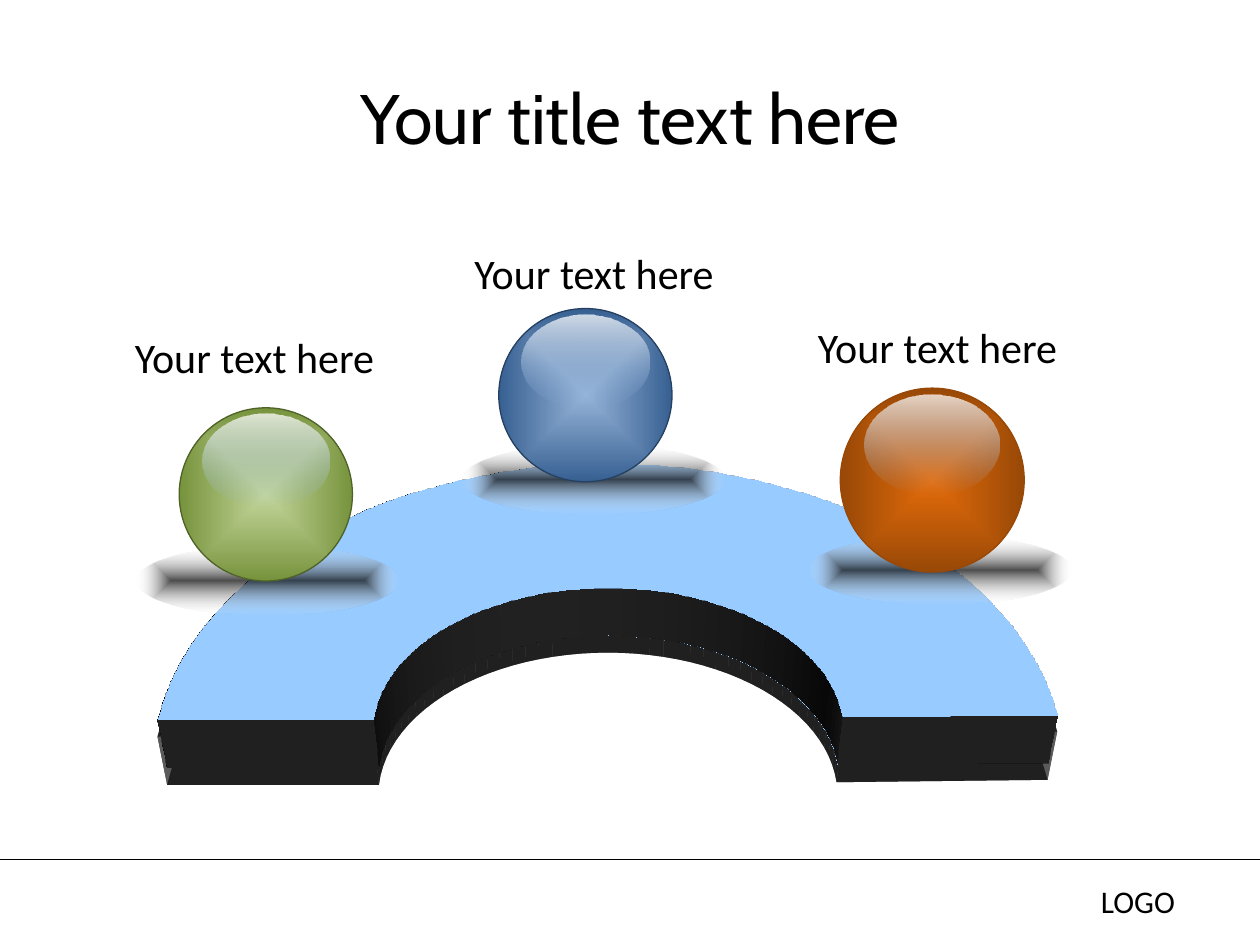
from pptx import Presentation
from pptx.dml.color import RGBColor
from pptx.enum.shapes import MSO_CONNECTOR, MSO_SHAPE
from pptx.enum.text import MSO_ANCHOR, MSO_AUTO_SIZE, PP_ALIGN
from pptx.oxml import parse_xml
from pptx.oxml.ns import nsdecls, qn
from pptx.util import Pt

OVAL, BLOCK_ARC = MSO_SHAPE.OVAL, MSO_SHAPE.BLOCK_ARC
STRAIGHT = MSO_CONNECTOR.STRAIGHT
MIDDLE = MSO_ANCHOR.MIDDLE
FIT_SHAPE = MSO_AUTO_SIZE.SHAPE_TO_FIT_TEXT
LEFT, CENTER = PP_ALIGN.LEFT, PP_ALIGN.CENTER
TITLE_ONLY = 5

COLORS = {
    "text": "000000",
    "arch": "4F81BD",
    "arch_outline": "3A5F8C",
    "arch_side": "404040",
    "arch_shadow": "000000",
    "shadow": "171717",
    "shadow_rim": "FFFFFF",
    "gloss": "FFFFFF",
    "gloss_end": "8EB4E3",
}
CENTER_OUT = ('<a:path path="shape"><a:fillToRect l="50000" t="50000" '
              'r="50000" b="50000"/></a:path>')
DOWNWARD = '<a:lin ang="5400000" scaled="0"/>'

# Gradient stops: position %, colour, opacity %
SHADOW_STOPS = [(0, COLORS["shadow"], 76), (100, COLORS["shadow_rim"], 0)]
GLOSS_STOPS = [(0, COLORS["gloss"], 77), (100, COLORS["gloss_end"], 0)]

# Left, top, diameter, shades from centre to rim, outline
SPHERES = [
    (480.2, 221.8, 105.1, ("E46C0A", "984807", "4C2403"), "984807"),
    (102.4, 233, 99, ("C3D69B", "77933C", "4F6228"), "4F6228"),
    (285, 176.3, 99, ("95B3D7", "376092", "254061"), "254061"),
]
SHADOWS = [(78, 312), (462, 306), (264.2, 254.2)]
LABELS = [(69.1, 185.8, CENTER), (264, 138.2, LEFT), (459.4, 180, CENTER)]


def rgb(color):
    return RGBColor.from_string(color)


def gradient_fill(shape, stops, direction):
    marks = "".join(
        f'<a:gs pos="{pos * 1000}"><a:srgbClr val="{color}">'
        f'<a:alpha val="{opacity * 1000}"/></a:srgbClr></a:gs>'
        for pos, color, opacity in stops)
    gradient = parse_xml(f'<a:gradFill {nsdecls("a")} rotWithShape="1">'
                         f'<a:gsLst>{marks}</a:gsLst>{direction}</a:gradFill>')
    shape.fill.background()
    properties = shape._element.spPr
    properties.replace(properties.find(qn("a:noFill")), gradient)


def add_oval(shapes, left, top, width, height, stops, direction, outline=None):
    oval = shapes.add_shape(OVAL, Pt(left), Pt(top), Pt(width), Pt(height))
    oval.shadow.inherit = False
    gradient_fill(oval, stops, direction)
    if outline:
        oval.line.color.rgb = rgb(outline)
        oval.line.width = Pt(0.75)
    else:
        oval.line.fill.background()


def add_sphere(slide, left, top, diameter, shades, outline):
    sphere = slide.shapes.add_group_shape().shapes
    ball_stops = [(pos, shade, 100) for pos, shade in zip((0, 100, 100), shades)]
    add_oval(sphere, left, top, diameter, diameter, ball_stops, CENTER_OUT, outline)
    gloss_width = diameter * 0.735
    add_oval(sphere, left + (diameter - gloss_width) / 2, top + diameter * 0.036,
             gloss_width, diameter * 0.54, GLOSS_STOPS, DOWNWARD)


def add_arch(slide):
    arch = slide.shapes.add_shape(BLOCK_ARC, Pt(90), Pt(174.2), Pt(514.8), Pt(473.8))
    for index, value in enumerate((108, 215.464, 0.261)):
        arch.adjustments[index] = value
    arch.fill.solid()
    arch.fill.fore_color.rgb = rgb(COLORS["arch"])
    arch.line.color.rgb = rgb(COLORS["arch_outline"])
    arch.line.width = Pt(2)
    # Drop shadow, tilted camera and thickness
    arch.shadow.inherit = False
    properties = arch._element.spPr
    properties.find(qn("a:effectLst")).append(parse_xml(
        f'<a:outerShdw {nsdecls("a")} blurRad="{Pt(20)}" dist="{Pt(10)}" dir="5400000" '
        f'rotWithShape="0"><a:srgbClr val="{COLORS["arch_shadow"]}">'
        '<a:alpha val="40000"/></a:srgbClr></a:outerShdw>'))
    properties.append(parse_xml(
        f'<a:scene3d {nsdecls("a")}><a:camera prst="perspectiveRelaxed"/>'
        '<a:lightRig rig="threePt" dir="t"/></a:scene3d>'))
    properties.append(parse_xml(
        f'<a:sp3d {nsdecls("a")} extrusionH="{Pt(40)}"><a:extrusionClr>'
        f'<a:srgbClr val="{COLORS["arch_side"]}"/></a:extrusionClr></a:sp3d>'))


def format_text(frame, text, size, font, align):
    frame.text = text
    paragraph = frame.paragraphs[0]
    paragraph.alignment = align
    run_font = paragraph.runs[0].font
    run_font.size = Pt(size)
    run_font.name = font
    run_font.color.rgb = rgb(COLORS["text"])


def add_label(slide, left, top, width, height, text, size, align, wrap):
    frame = slide.shapes.add_textbox(Pt(left), Pt(top), Pt(width), Pt(height)).text_frame
    frame.word_wrap = wrap
    frame.auto_size = FIT_SHAPE
    format_text(frame, text, size, "Calibri", align)


def add_footer(slide):
    rule = slide.shapes.add_connector(STRAIGHT, Pt(0), Pt(491), Pt(720), Pt(491))
    rule.line.color.rgb = rgb(COLORS["text"])
    rule.line.width = Pt(0.75)
    rule._element.spPr.append(parse_xml(f'<a:effectLst {nsdecls("a")}/>'))
    add_label(slide, 622, 500.4, 80, 29, "LOGO", 18, LEFT, True)


def set_title(slide):
    title = slide.shapes.title
    title.left, title.top, title.width, title.height = Pt(36), Pt(21.6), Pt(648), Pt(90)
    title.text_frame.vertical_anchor = MIDDLE
    format_text(title.text_frame, "Your title text here", 40, "Cabin", CENTER)


def main():
    deck = Presentation()
    deck.slide_width, deck.slide_height = Pt(720), Pt(540)
    slide = deck.slides.add_slide(deck.slide_layouts[TITLE_ONLY])
    set_title(slide)
    add_footer(slide)
    add_arch(slide)
    # Spheres resting on their shadows
    for left, top in SHADOWS:
        add_oval(slide.shapes, left, top, 150, 39.6, SHADOW_STOPS, CENTER_OUT)
    for sphere in SPHERES:
        add_sphere(slide, *sphere)
    for left, top, align in LABELS:
        add_label(slide, left, top, 152.6, 36, "Your text here", 24, align, False)
    deck.save("out.pptx")


if __name__ == "__main__":
    main()
